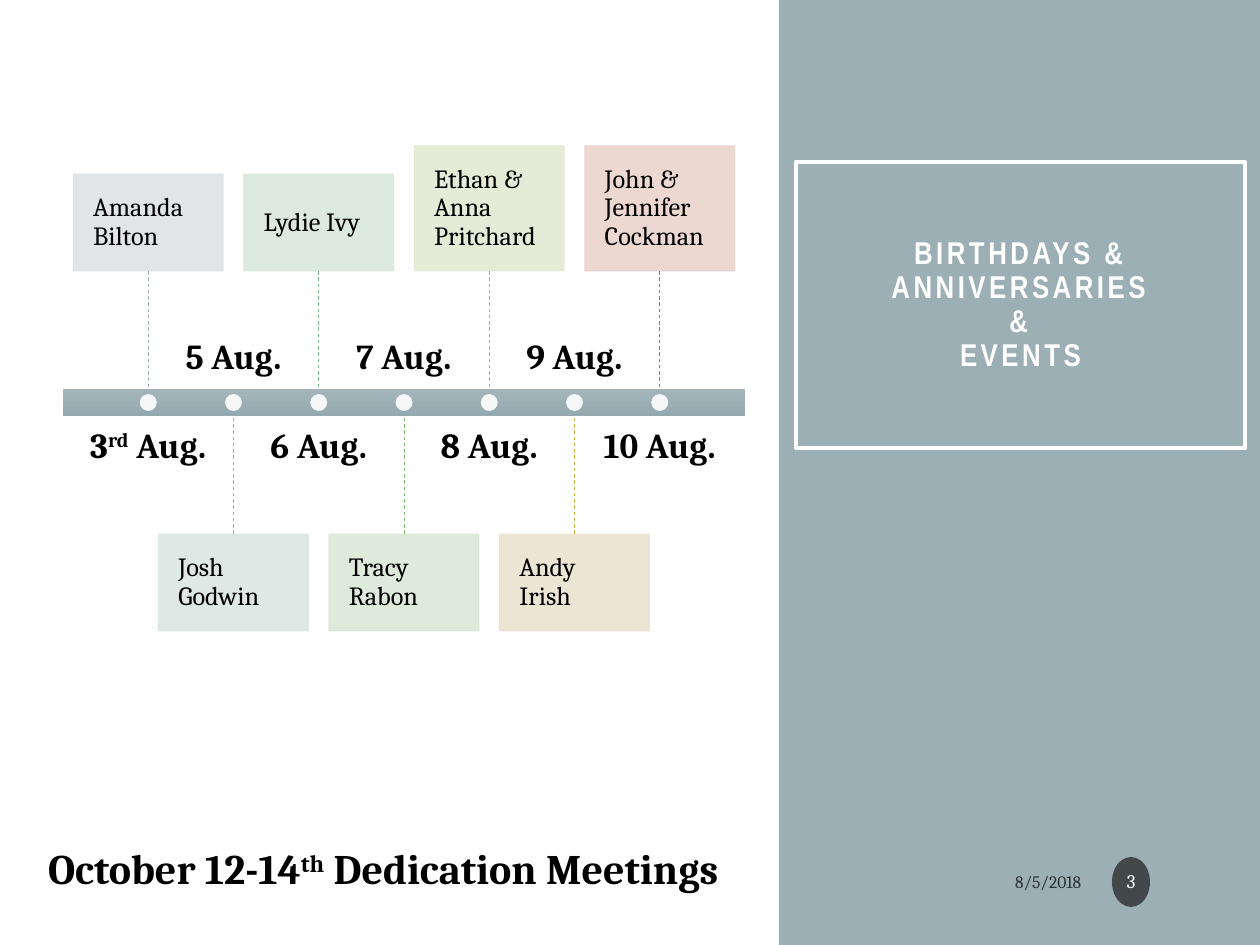
from lxml import etree
from pptx import Presentation
from pptx.dml.color import RGBColor
from pptx.enum.dml import MSO_LINE
from pptx.enum.shapes import MSO_CONNECTOR, MSO_SHAPE
from pptx.enum.text import MSO_ANCHOR, PP_ALIGN
from pptx.oxml.ns import qn
from pptx.util import Emu, Pt

RECT, OVAL = MSO_SHAPE.RECTANGLE, MSO_SHAPE.OVAL
STRAIGHT, DASH = MSO_CONNECTOR.STRAIGHT, MSO_LINE.DASH
LEFT, CENTER, RIGHT = PP_ALIGN.LEFT, PP_ALIGN.CENTER, PP_ALIGN.RIGHT
TOP, MIDDLE, BOTTOM = MSO_ANCHOR.TOP, MSO_ANCHOR.MIDDLE, MSO_ANCHOR.BOTTOM

WHITE = RGBColor(0xFF, 0xFF, 0xFF)
BLACK = RGBColor(0x00, 0x00, 0x00)
CHARCOAL = RGBColor(0x1D, 0x1D, 0x1D)
SLATE = RGBColor(0x9B, 0xAF, 0xB5)
BAR_LIGHT = RGBColor(0xA3, 0xB5, 0xBB)
BAR_DARK = RGBColor(0x93, 0xA9, 0xAF)
SERIF, NARROW = "Cambria", "Arial Narrow"

# date as (text, is superscript) runs, name, lines in the card, card colour, stem colour
EVENTS = [
    ([("3", False), ("rd", True), (" Aug.", False)], "Amanda Bilton", 2,
     RGBColor(0xDE, 0xE3, 0xE5), SLATE),
    ([("5 Aug.", False)], "Josh Godwin", 2,
     RGBColor(0xDB, 0xE6, 0xE3), RGBColor(0x8C, 0xB6, 0xAC)),
    ([("6 Aug.", False)], "Lydie Ivy", 2,
     RGBColor(0xD9, 0xE7, 0xDC), RGBColor(0x7B, 0xB8, 0x8C)),
    ([("7 Aug.", False)], "Tracy Rabon", 2,
     RGBColor(0xDB, 0xE8, 0xD6), RGBColor(0x7A, 0xBC, 0x69)),
    ([("8 Aug.", False)], "Ethan & Anna Pritchard", 3,
     RGBColor(0xE4, 0xE9, 0xD3), RGBColor(0x9F, 0xC0, 0x57)),
    ([("9 Aug.", False)], "Andy Irish", 2,
     RGBColor(0xEA, 0xE3, 0xD0), RGBColor(0xC5, 0xB0, 0x43)),
    ([("10 Aug.", False)], "John & Jennifer Cockman", 3,
     RGBColor(0xEB, 0xD3, 0xCD), RGBColor(0xC9, 0x67, 0x31)),
]


def px(length):
    return Emu(round(length * 914400 / 126))


def set_alpha(element, percent):
    """Make every colour already set inside the element translucent."""
    for color in element.iter(qn("a:srgbClr")):
        etree.SubElement(color, qn("a:alpha")).set("val", str(percent * 1000))


def add_block(slide, kind, x, y, w, h, fill=None, line=None, line_pt=0.5, alpha=100):
    block = slide.shapes.add_shape(kind, px(x), px(y), px(w), px(h))
    block.shadow.inherit = False
    if fill is None:
        block.fill.background()
    else:
        block.fill.solid()
        block.fill.fore_color.rgb = fill
    if line is None:
        block.line.fill.background()
    else:
        block.line.color.rgb = line
        block.line.width = Pt(line_pt)
    if alpha < 100:
        set_alpha(block.element.spPr, alpha)
    return block


def add_label(slide, x, y, w, h):
    return slide.shapes.add_textbox(px(x), px(y), px(w), px(h))


def set_frame(shape, anchor, align, inset_x, inset_y, spacing=0.9):
    """Lay out the shape's text and return its first paragraph."""
    frame = shape.text_frame
    frame.word_wrap = True
    frame.vertical_anchor = anchor
    frame.margin_left = frame.margin_right = px(inset_x)
    frame.margin_top = frame.margin_bottom = px(inset_y)
    paragraph = frame.paragraphs[0]
    paragraph.alignment = align
    paragraph.line_spacing = spacing
    return paragraph


def add_run(paragraph, text, size, color=BLACK, bold=False, font=SERIF, raised=False):
    run = paragraph.add_run()
    run.text = text
    run.font.size = Pt(size)
    run.font.name = font
    run.font.bold = bold
    run.font.color.rgb = color
    if raised:
        run.font._element.set("baseline", "30000")
    return run


def add_stem(slide, card, site, x, card_y, bar_y, color):
    stem = slide.shapes.add_connector(STRAIGHT, px(x), px(card_y), px(x), px(bar_y))
    stem.begin_connect(card, site)
    stem.line.color.rgb = color
    stem.line.width = Pt(0.5)
    stem.line.dash_style = DASH
    etree.SubElement(stem.element.spPr, qn("a:effectLst"))


def add_event(slide, event, above, x, bar_top, bar_bottom):
    """Place one date, card, stem and dot around the centre x; the card is above or below."""
    date, name, lines, card_color, stem_color = event
    card_w, card_h, stem_h = 150, 97 + 28 * (lines - 2), 118
    date_w, date_h, date_gap, dot = 136, 78, 12, 17

    card_y = bar_top - stem_h - card_h if above else bar_bottom + stem_h
    card = add_block(slide, RECT, x - card_w / 2, card_y, card_w, card_h,
                     card_color, card_color, alpha=90)
    add_run(set_frame(card, MIDDLE, LEFT, 20, 20), name, 15)
    if above:
        add_stem(slide, card, 2, x, card_y + card_h, bar_top, stem_color)
    else:
        add_stem(slide, card, 0, x, card_y, bar_bottom, stem_color)

    date_y = bar_bottom + date_gap if above else bar_top - date_gap - date_h
    label = add_label(slide, x - date_w / 2, date_y, date_w, date_h)
    paragraph = set_frame(label, TOP if above else BOTTOM, CENTER, 0, 0)
    for text, raised in date:
        add_run(paragraph, text, 20, bold=True, raised=raised)

    add_block(slide, OVAL, x - dot / 2, (bar_top + bar_bottom - dot) / 2, dot, dot,
              WHITE, alpha=90)


def add_timeline(slide, x, y, w, h):
    """Draw the bar in the given box, with the events at equal steps along it."""
    bar = add_block(slide, RECT, x, y, w, h, SLATE)
    bar.fill.gradient()
    bar.fill.gradient_angle = 270
    for stop, color in zip(bar.fill.gradient_stops, (BAR_LIGHT, BAR_DARK)):
        stop.color.rgb = color
    step = w / (len(EVENTS) + 1)
    for index, event in enumerate(EVENTS):
        add_event(slide, event, index % 2 == 0, x + step * (index + 1), y, y + h)


def add_side_panel(slide, x, y, w, h):
    add_block(slide, RECT, x, y, w, h, SLATE)

    title = add_block(slide, RECT, x + 17, y + 162, 449, 286, line=WHITE, line_pt=2.5)
    paragraph = set_frame(title, MIDDLE, CENTER, 25, 25)
    for index, line in enumerate(["BIRTHDAYS & ANNIVERSARIES", "&", "EVENTS"]):
        if index:
            paragraph.add_line_break()
        run = add_run(paragraph, line, 18, WHITE, True, NARROW)
        run.font._element.set("spc", "200")

    day = add_label(slide, x + 30, y + 859, 285, 44)
    run = add_run(set_frame(day, MIDDLE, RIGHT, 13, 6, 1.0), "8/5/2018", 10)
    set_alpha(run.font._element, 70)

    badge = add_block(slide, OVAL, x + 333, y + 857, 38, 50, CHARCOAL, alpha=70)
    add_run(set_frame(badge, MIDDLE, CENTER, 2, 6), "3", 11, WHITE)


def add_announcement(slide, x, y, w, h):
    paragraph = set_frame(add_label(slide, x, y, w, h), TOP, LEFT, 13, 6, 1.0)
    for text, raised in [("October 12-14", False), ("th", True),
                         (" Dedication Meetings", False)]:
        add_run(paragraph, text, 24, bold=True, raised=raised)


def main():
    deck = Presentation()
    deck.slide_width, deck.slide_height = px(1260), px(945)
    slide = deck.slides.add_slide(deck.slide_layouts[6])
    add_side_panel(slide, 779, 0, 481, 945)
    add_timeline(slide, 63, 389, 682, 27)
    add_announcement(slide, 35, 837, 747, 63)
    deck.save("out.pptx")


if __name__ == "__main__":
    main()
